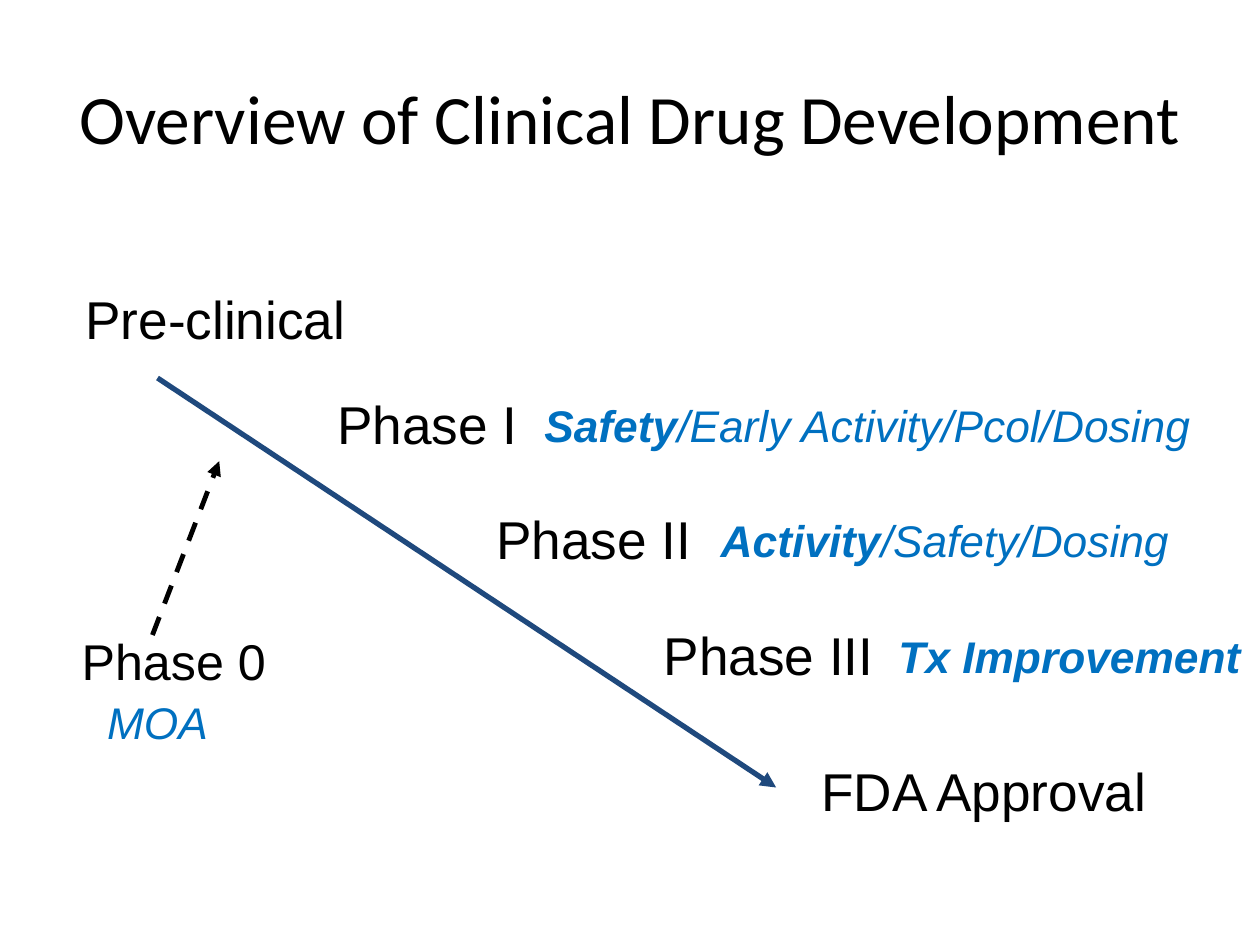
from lxml import etree
from pptx import Presentation
from pptx.dml.color import RGBColor
from pptx.enum import dml, shapes, text
from pptx.oxml.ns import qn
from pptx.util import Inches, Pt

BLACK = RGBColor(0x00, 0x00, 0x00)
BLUE = RGBColor(0x00, 0x70, 0xC0)
NAVY = RGBColor(0x1F, 0x49, 0x7D)

# left, top, width, height, size, wording
STAGES = [
    (0.58, 2.22, 2.28, 0.61, 30.4, "Pre-clinical"),
    (2.58, 3.06, 1.64, 0.61, 30.4, "Phase I"),
    (3.84, 3.97, 1.76, 0.61, 30.4, "Phase II"),
    (5.17, 4.89, 1.88, 0.61, 30.4, "Phase III"),
    (6.42, 5.97, 2.8, 0.61, 30.4, "FDA Approval"),
    (0.55, 4.95, 1.67, 0.58, 28.7, "Phase 0"),
]
# left, top, width, main goal (bold), further goals
GOALS = [
    (0.76, 5.48, 1, "", "MOA"),
    (7.04, 4.95, 2.92, "Tx Improvement", ""),
    (5.63, 4.03, 3.77, "Activity", "/Safety/Dosing"),
    (4.23, 3.12, 5.35, "Safety", "/Early Activity/Pcol/Dosing"),
]


def add_text_box(slide, left, top, width, height, side=0.1, edge=0.05):
    """Add an empty text box and return its text frame."""
    box = slide.shapes.add_textbox(
        Inches(left), Inches(top), Inches(width), Inches(height))
    frame = box.text_frame
    frame.margin_left = frame.margin_right = Inches(side)
    frame.margin_top = frame.margin_bottom = Inches(edge)
    return frame


def fit_to_one_line(frame):
    """Keep the text on one line and let the box grow with it."""
    frame.word_wrap = False
    frame.auto_size = text.MSO_AUTO_SIZE.SHAPE_TO_FIT_TEXT


def add_run(paragraph, wording, size, color, name="Arial", bold=False, italic=False):
    run = paragraph.add_run()
    run.text = wording
    font = run.font
    font.name, font.size = name, Pt(size)
    font.bold, font.italic = bold, italic
    font.color.rgb = color


def add_title(slide, wording):
    frame = add_text_box(slide, 0.5, 0.3, 9, 1.25)
    frame.word_wrap = True
    frame.vertical_anchor = text.MSO_ANCHOR.MIDDLE
    paragraph = frame.paragraphs[0]
    paragraph.alignment = text.PP_ALIGN.CENTER
    add_run(paragraph, wording, 39.6, BLACK, name="Calibri")


def add_stage(slide, left, top, width, height, size, wording):
    frame = add_text_box(slide, left, top, width, height)
    fit_to_one_line(frame)
    add_run(frame.paragraphs[0], wording, size, BLACK)


def add_goals(slide, left, top, width, main_goal, further_goals):
    frame = add_text_box(slide, left, top, width, 0.51, side=0.09, edge=0.04)
    fit_to_one_line(frame)
    for wording, bold in ((main_goal, True), (further_goals, False)):
        if wording:
            add_run(frame.paragraphs[0], wording, 25.3, BLUE, bold=bold, italic=True)


def add_arrow(slide, start, end, color, width, dash=None):
    arrow = slide.shapes.add_connector(
        shapes.MSO_CONNECTOR.STRAIGHT, *map(Inches, start + end))
    arrow.line.color.rgb = color
    arrow.line.width = Pt(width)
    if dash:
        arrow.line.dash_style = dash
    properties = arrow._element.spPr
    etree.SubElement(properties.find(qn("a:ln")), qn("a:tailEnd"), type="triangle")
    etree.SubElement(properties, qn("a:effectLst"))


def main():
    presentation = Presentation()
    presentation.slide_width, presentation.slide_height = Inches(10), Inches(7.5)
    slide = presentation.slides.add_slide(presentation.slide_layouts[6])
    add_title(slide, "Overview of Clinical Drug Development")
    for stage in STAGES:
        add_stage(slide, *stage)
    add_arrow(slide, (1.25, 3), (6.16, 6.25), NAVY, 3)
    add_arrow(slide, (1.21, 5.04), (1.74, 3.66), BLACK, 2.75, dml.MSO_LINE.DASH)
    for goals in GOALS:
        add_goals(slide, *goals)
    presentation.save("out.pptx")


if __name__ == "__main__":
    main()
